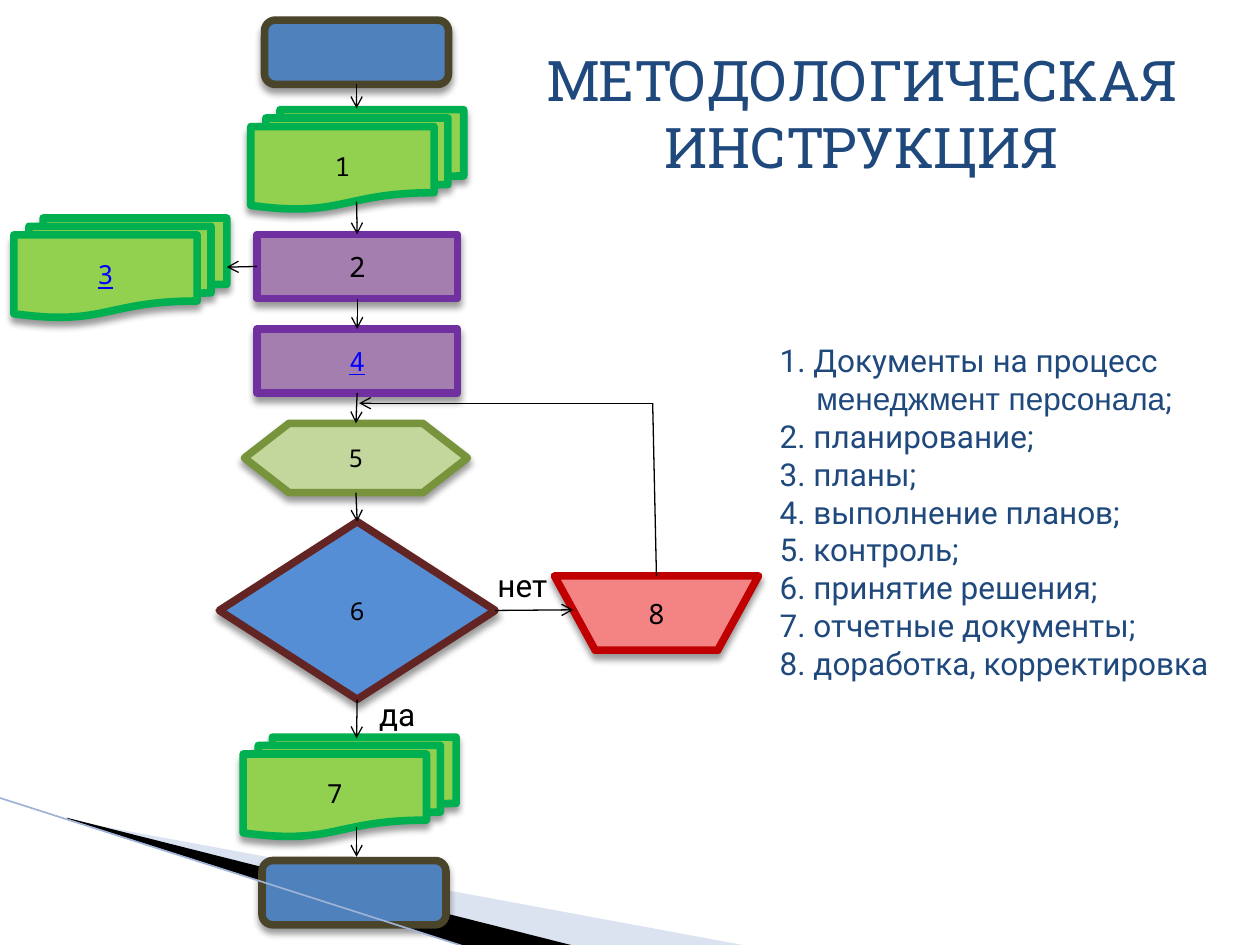
from lxml import etree
from pptx import Presentation, util as u
from pptx.dml.color import RGBColor
from pptx.enum import shapes, text
from pptx.oxml.ns import qn

BLACK = RGBColor(0x00, 0x00, 0x00)
NAVY = RGBColor(0x1F, 0x49, 0x7D)
LINK = RGBColor(0x00, 0x00, 0xFF)
SOFT = RGBColor(0xA7, 0xB9, 0xDB)
EDGE = RGBColor(0x9E, 0xB3, 0xD6)
BLUE, BROWN = RGBColor(0x4F, 0x81, 0xBD), RGBColor(0x4A, 0x45, 0x2A)
MAUVE, PURPLE = RGBColor(0xA5, 0x7E, 0xB0), RGBColor(0x70, 0x30, 0xA0)
OLIVE, MOSS = RGBColor(0xC3, 0xD6, 0x9B), RGBColor(0x77, 0x93, 0x3C)
SKY, MAROON = RGBColor(0x55, 0x8E, 0xD5), RGBColor(0x63, 0x25, 0x23)
PINK, RED = RGBColor(0xF4, 0x84, 0x84), RGBColor(0xC0, 0x00, 0x00)
LIME, GREEN = RGBColor(0x92, 0xD0, 0x50), RGBColor(0x00, 0xB0, 0x50)

prs = Presentation()
prs.slide_width, prs.slide_height = u.Inches(10), u.Inches(7.5)
s = prs.slides.add_slide(prs.slide_layouts[6])

# Grid of 100 columns by 75 rows, with square cells
CELL = prs.slide_width / 100


def grid(*cells):
    return [round(c * CELL) for c in cells]


def write(p, words, **fmt):
    r = p.add_run()
    r.text = words
    r.font.color.rgb = fmt.pop("color")
    for name, value in fmt.items():
        setattr(r.font, name, value)


# Sweeping wedges in the lower left corner
wedges = [
    ([(5.5, 65.1), (59.5, 75.1), (45.6, 75.1), (5.5, 65)], SOFT, 40),
    ([(5.3, 64.9), (45.7, 75.1), (37.2, 75.2), (5.4, 65)], BLACK, 100),
]
for points, color, opacity in wedges:
    start, *rest = [grid(*pt) for pt in points]
    fb = s.shapes.build_freeform(*start, scale=1.0)
    fb.add_line_segments(rest, close=True)
    sp = fb.convert_to_shape()
    sp.shadow.inherit = False
    sp.fill.solid()
    sp.fill.fore_color.rgb = color
    sp.line.fill.background()
    if opacity < 100:
        clr = sp._element.spPr.find(".//" + qn("a:srgbClr"))
        etree.SubElement(clr, qn("a:alpha"), val=str(opacity * 1000))

# Flowchart steps: name, preset, place, fill, outline, label, size, label colour
M = shapes.MSO_SHAPE
BOX, ROUND, STACK = M.RECTANGLE, M.ROUNDED_RECTANGLE, M.FLOWCHART_MULTIDOCUMENT
steps = [
    ("start", ROUND, (21, 1.6, 14.6, 5.1), BLUE, BROWN, "", 0, BLACK),
    ("plan", BOX, (20.4, 18.6, 15.9, 5.1), MAUVE, PURPLE, "2", 16, BLACK),
    ("perform", BOX, (20.4, 26.1, 15.9, 5.1), MAUVE, PURPLE, "4", 15, LINK),
    ("control", M.FLOWCHART_PREPARATION, (19.4, 33.6, 17.7, 5.5), OLIVE, MOSS, "5", 14, BLACK),
    ("decide", M.DIAMOND, (17.4, 41.4, 21.9, 14.1), SKY, MAROON, "6", 14, BLACK),
    ("rework", M.FLOWCHART_MANUAL_OPERATION, (44, 45.7, 16.2, 5.9), PINK, RED, "8", 16, BLACK),
    ("input", STACK, (19.9, 8.7, 16.9, 7.9), LIME, GREEN, "1", 15, BLACK),
    ("plans", STACK, (1.1, 17.3, 16.9, 7.9), LIME, GREEN, "3", 15, LINK),
    ("report", STACK, (19.3, 58.5, 16.9, 7.9), LIME, GREEN, "7", 15, BLACK),
    ("finish", ROUND, (20.8, 68.3, 14.6, 5.1), BLUE, BROWN, "", 0, BLACK),
]
node = {}
for name, preset, place, fill, outline, label, size, color in steps:
    sp = node[name] = s.shapes.add_shape(preset, *grid(*place))
    sp.fill.solid()
    sp.fill.fore_color.rgb = fill
    sp.line.color.rgb = outline
    sp.line.width = u.Pt(4.33)
    # Soft shadow straight below
    sp.shadow.inherit = False
    effects = sp._element.spPr.find(qn("a:effectLst"))
    shadow = etree.SubElement(effects, qn("a:outerShdw"), blurRad=str(u.Pt(4)),
                              dist=str(u.Pt(3)), dir="5400000", rotWithShape="0")
    clr = etree.SubElement(shadow, qn("a:srgbClr"), val="000000")
    etree.SubElement(clr, qn("a:alpha"), val="40000")
    if label:
        tf = sp.text_frame
        tf.vertical_anchor = text.MSO_ANCHOR.MIDDLE
        p = tf.paragraphs[0]
        p.alignment = text.PP_ALIGN.CENTER
        write(p, label, size=u.Pt(size), name="Noto Sans Mono", color=color,
              underline=True if color == LINK else None)

# Lines: ends, joined step and side at each end, colour, width, arrowhead
TOP, LEFT, BOTTOM, RIGHT = range(4)
lines = [
    ((-0.1, 63.3, 37.1, 75.2), None, None, EDGE, 0.95, False),
    ((28.3, 6.7, 28.3, 8.6), ("start", BOTTOM), None, BLACK, 0.75, True),
    ((28.3, 16, 28.3, 18.5), None, ("plan", TOP), BLACK, 0.75, True),
    ((28.4, 23.8, 28.4, 26.1), ("plan", BOTTOM), ("perform", TOP), BLACK, 0.75, True),
    ((28.3, 31.2, 28.4, 33.5), ("perform", BOTTOM), ("control", TOP), BLACK, 0.75, True),
    ((28.3, 39, 28.3, 41.4), ("control", BOTTOM), ("decide", TOP), BLACK, 0.75, True),
    ((20.4, 21.2, 18, 21.2), ("plan", LEFT), None, BLACK, 0.75, True),
    ((28.3, 55.5, 28.3, 58.6), ("decide", BOTTOM), None, BLACK, 0.75, True),
    ((28.3, 65.6, 28.3, 68), None, None, BLACK, 0.75, True),
    ((39.3, 48.4, 45.5, 48.4), ("decide", RIGHT), None, BLACK, 0.75, True),
    ((51.8, 32, 28.5, 32), None, None, BLACK, 0.75, True),
    ((51.8, 32, 52.1, 45.7), None, ("rework", TOP), BLACK, 0.75, False),
]
for ends, begin, end, color, width, arrow in lines:
    cx = s.shapes.add_connector(shapes.MSO_CONNECTOR.STRAIGHT, *grid(*ends))
    if begin:
        cx.begin_connect(node[begin[0]], begin[1])
    if end:
        cx.end_connect(node[end[0]], end[1])
    cx.line.color.rgb = color
    cx.line.width = u.Pt(width)
    if arrow:
        etree.SubElement(cx.line._get_or_add_ln(), qn("a:tailEnd"), type="arrow")
    etree.SubElement(cx._element.spPr, qn("a:effectLst"))

# Title, branch labels and legend: each paragraph is a list of (words, font)
CENTER, START = text.PP_ALIGN.CENTER, text.PP_ALIGN.LEFT
legend = [[("1. Документы на процесс ", "Roboto"), ("менеджмент персонала", "Arial"),
           (";", "Roboto")]]
items = ["планирование;", "планы;", "выполнение планов;", "контроль;",
         "принятие решения;", "отчетные документы;", "доработка, корректировка"]
legend += [[(f"{n}. {item}", "Roboto")] for n, item in enumerate(items, 2)]
boxes = [
    ((39.1, 3.1, 58.6, 14.6), [[("МЕТОДОЛОГИЧЕСКАЯ ИНСТРУКЦИЯ", "Roboto Slab")]],
     32, NAVY, CENTER, 0),
    ((29.1, 54.7, 5.5, 4), [[("да", "Roboto")]], 18, BLACK, START, 0),
    ((38.5, 44.4, 7, 4), [[("нет", "Roboto")]], 18, BLACK, START, 0),
    ((60.9, 26.6, 37.4, 29.1), legend, 18, NAVY, START, 2.9),
]
for place, paragraphs, size, color, align, hang in boxes:
    tf = s.shapes.add_textbox(*grid(*place)).text_frame
    tf.word_wrap = place[2] > 10
    for i, runs in enumerate(paragraphs):
        p = tf.add_paragraph() if i else tf.paragraphs[0]
        p.alignment = align
        if hang:
            indent, = grid(hang)
            pPr = p._p.get_or_add_pPr()
            pPr.set("marL", str(indent))
            pPr.set("indent", str(-indent))
        for words, font in runs:
            write(p, words, size=u.Pt(size), name=font, color=color)

prs.save("out.pptx")
